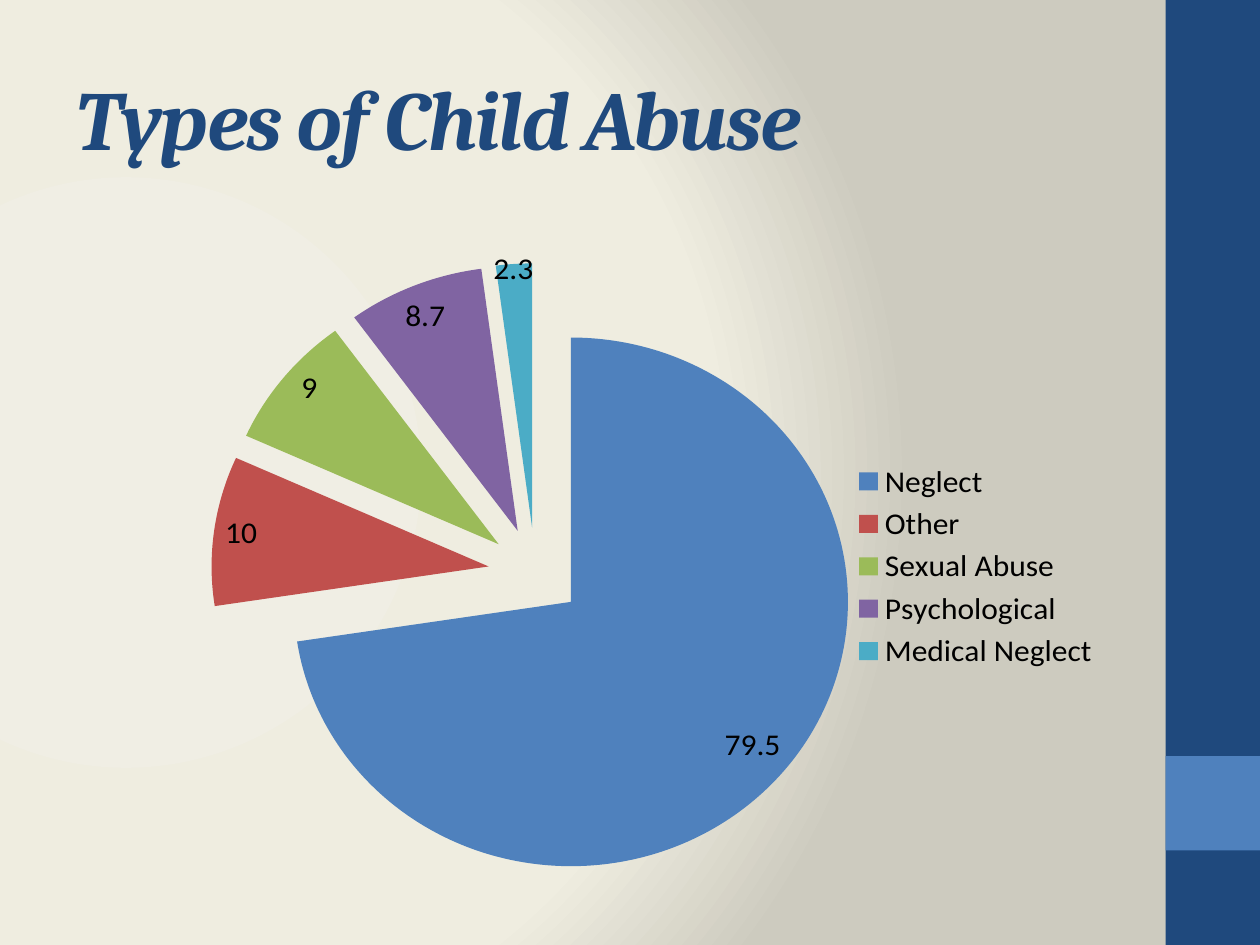
"""Build the slide on the types of child abuse, with an exploded pie chart."""
from typing import NamedTuple

from pptx import Presentation
from pptx.chart.data import CategoryChartData
from pptx.dml.color import RGBColor as Rgb
from pptx.enum.chart import XL_CHART_TYPE as ChartType
from pptx.enum.chart import XL_LABEL_POSITION as LabelPos
from pptx.enum.chart import XL_LEGEND_POSITION as LegendPos
from pptx.enum.shapes import MSO_SHAPE as Preset
from pptx.enum.text import MSO_ANCHOR as Anchor
from pptx.enum.text import PP_ALIGN as Align
from pptx.oxml import parse_xml
from pptx.oxml.ns import nsdecls, qn
from pptx.util import Inches, Pt

COLORS = {
    "navy": "1F497D", "blue": "4F81BD", "red": "C0504D", "green": "9BBB59",
    "purple": "8064A2", "teal": "4BACC6", "text": "000000",
}
BACKDROP_STOPS = {0: "F0EEE4", 75: "EFEDE0", 100: "CDCBBF"}
PLOT_LAYOUT = {"x": 0, "y": 0.02, "w": 0.9, "h": 0.98}
EXPLOSION = 17


class Band(NamedTuple):
    """A coloured block in the right-hand strip."""
    top: float
    height: float
    color: str


class AbuseType(NamedTuple):
    """One slice of the pie."""
    name: str
    share: float
    color: str


BANDS = [Band(0, 7.5, "navy"), Band(6, 0.75, "blue")]
ABUSE_TYPES = [
    AbuseType("Neglect", 79.5, "blue"),
    AbuseType("Other", 10, "red"),
    AbuseType("Sexual Abuse", 9, "green"),
    AbuseType("Psychological", 8.7, "purple"),
    AbuseType("Medical Neglect", 2.3, "teal"),
]


def rgb(name: str) -> Rgb:
    """Look up a named colour."""
    return Rgb.from_string(COLORS[name])


def paint_backdrop(slide) -> None:
    """Fill the background with a circular gradient."""
    slide.background.fill.solid()
    stops = "".join(
        f'<a:gs pos="{pos * 1000}"><a:srgbClr val="{color}"/></a:gs>'
        for pos, color in BACKDROP_STOPS.items()
    )
    gradient = parse_xml(
        f'<a:gradFill {nsdecls("a")} rotWithShape="1"><a:gsLst>{stops}</a:gsLst>'
        '<a:path path="circle"><a:fillToRect l="20000" t="50000" r="100000"'
        ' b="50000"/></a:path></a:gradFill>'
    )
    solid = next(slide.element.iter(qn("a:solidFill")))
    solid.getparent().replace(solid, gradient)


def draw_band(slide, band: Band) -> None:
    """Draw one block of the right-hand strip."""
    block = slide.shapes.add_shape(
        Preset.RECTANGLE, Inches(9.25), Inches(band.top), Inches(0.75), Inches(band.height)
    )
    block.shadow.inherit = False
    block.fill.solid()
    block.fill.fore_color.rgb = rgb(band.color)
    block.line.fill.background()


def write_title(slide, wording: str) -> None:
    """Place and format the slide title."""
    title = slide.shapes.title
    title.left, title.top = Inches(0.5), Inches(0.3)
    title.width, title.height = Inches(8.33), Inches(1.25)
    title.text_frame.vertical_anchor = Anchor.MIDDLE
    heading = title.text_frame.paragraphs[0]
    heading.alignment = Align.LEFT
    run = heading.add_run()
    run.text = wording
    run.font.name, run.font.size = "Cambria", Pt(48)
    run.font.bold = run.font.italic = True
    run.font.color.rgb = rgb("navy")
    run.font._element.set("spc", "-100")


def lay_out_plot(chart) -> None:
    """Fix the inner plot area within the chart."""
    plot_area = next(chart.element.iter(qn("c:plotArea")))
    for automatic in plot_area.findall(qn("c:layout")):
        plot_area.remove(automatic)
    modes = "".join(f'<c:{side}Mode val="edge"/>' for side in "xy")
    sizes = "".join(f'<c:{side} val="{value}"/>' for side, value in PLOT_LAYOUT.items())
    plot_area.insert(0, parse_xml(
        f'<c:layout {nsdecls("c")}><c:manualLayout><c:layoutTarget val="inner"/>'
        f"{modes}{sizes}</c:manualLayout></c:layout>"
    ))


def draw_pie(slide, abuse_types: list[AbuseType]) -> None:
    """Draw the exploded pie with value labels and a legend."""
    shares = CategoryChartData()
    shares.categories = [kind.name for kind in abuse_types]
    shares.add_series("Series 1", [kind.share for kind in abuse_types])
    chart = slide.shapes.add_chart(
        ChartType.PIE, Inches(0.5), Inches(1.75), Inches(8.33), Inches(5.25), shares
    ).chart
    chart.has_title = False
    chart.font.name, chart.font.size = "Calibri", Pt(18)
    chart.font.color.rgb = rgb("text")
    chart.has_legend = True
    chart.legend.position = LegendPos.RIGHT
    chart.legend.include_in_layout = False
    lay_out_plot(chart)

    pie = chart.plots[0]
    pie.vary_by_categories = True
    series = pie.series[0]
    series._element.find(qn("c:tx")).addnext(
        parse_xml(f'<c:explosion {nsdecls("c")} val="{EXPLOSION}"/>')
    )
    for index, kind in enumerate(abuse_types):
        fill = series.points[index].format.fill
        fill.solid()
        fill.fore_color.rgb = rgb(kind.color)
    labels = series.data_labels
    labels.show_value = True
    labels.position = LabelPos.BEST_FIT


def main() -> None:
    """Assemble and save the slide."""
    deck = Presentation()
    deck.slide_width, deck.slide_height = Inches(10), Inches(7.5)
    slide = deck.slides.add_slide(deck.slide_layouts[5])
    paint_backdrop(slide)
    for band in BANDS:
        draw_band(slide, band)
    write_title(slide, "Types of Child Abuse")
    draw_pie(slide, ABUSE_TYPES)
    deck.save("out.pptx")


if __name__ == "__main__":
    main()
